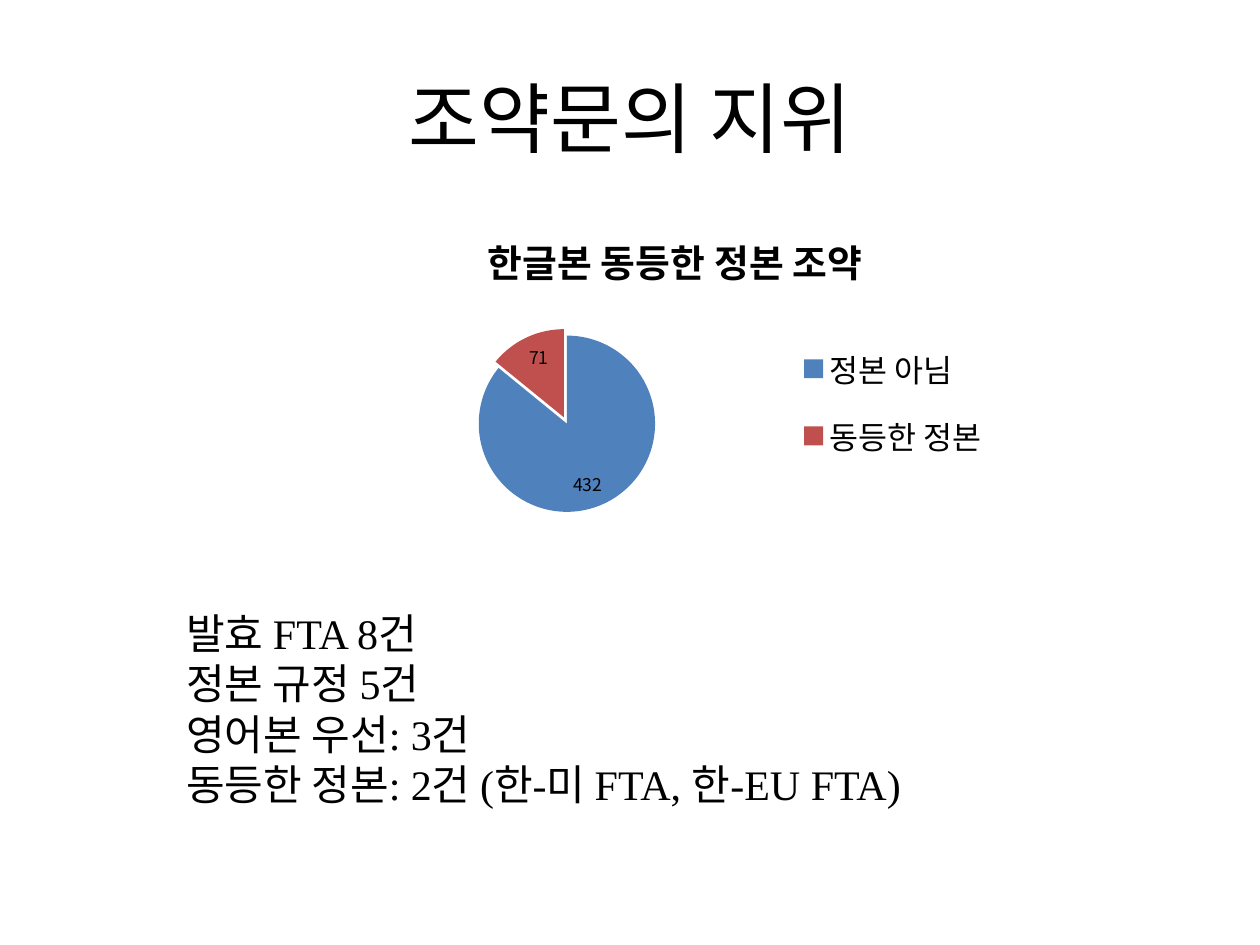
from lxml import etree
from pptx import Presentation
from pptx.chart.data import CategoryChartData
from pptx.dml.color import RGBColor
from pptx.enum.chart import XL_CHART_TYPE, XL_LABEL_POSITION, XL_LEGEND_POSITION
from pptx.enum.text import MSO_ANCHOR, PP_ALIGN
from pptx.oxml.ns import qn
from pptx.util import Inches, Pt

PIE = XL_CHART_TYPE.PIE
INSIDE_END = XL_LABEL_POSITION.INSIDE_END
LEGEND_RIGHT = XL_LEGEND_POSITION.RIGHT
LEFT, CENTER = PP_ALIGN.LEFT, PP_ALIGN.CENTER
TOP, MIDDLE = MSO_ANCHOR.TOP, MSO_ANCHOR.MIDDLE


def color(hex_string):
    return RGBColor.from_string(hex_string)


def add_value(parent, tag, value):
    etree.SubElement(parent, qn(tag)).set("val", str(value))


def set_layout(element, inner=False, **fractions):
    for old_layout in element.findall(qn("c:layout")):
        element.remove(old_layout)
    layout = etree.Element(qn("c:layout"))
    overlay = element.find(qn("c:overlay"))
    if overlay is None:
        element.insert(0, layout)
    else:
        overlay.addprevious(layout)
    manual = etree.SubElement(layout, qn("c:manualLayout"))
    if inner:
        add_value(manual, "c:layoutTarget", "inner")
    for mode in ("xMode", "yMode"):
        add_value(manual, f"c:{mode}", "edge")
    for name, fraction in fractions.items():
        add_value(manual, f"c:{name}", fraction)


class SlideBuilder:
    text_font = "Times New Roman"
    korean_font = "Noto Sans CJK KR"
    text_color = "000000"

    def __init__(self, slide):
        self.slide = slide

    def style_font(self, font, size, name=None, bold=False):
        font.size = Pt(size)
        font.bold = bold
        font.color.rgb = color(self.text_color)
        if name:
            font.name = name

    def add_text(self, box, lines, size, align=LEFT, anchor=TOP):
        shape = self.slide.shapes.add_textbox(*map(Inches, box))
        text_frame = shape.text_frame
        text_frame.word_wrap = True
        text_frame.vertical_anchor = anchor
        text_frame.text = "\n".join(lines)
        for paragraph in text_frame.paragraphs:
            paragraph.alignment = align
            for run in paragraph.runs:
                self.style_font(run.font, size, self.text_font)

    def add_pie(self, box, title, slices, size):
        data = CategoryChartData()
        data.categories = [name for name, value, fill in slices]
        data.add_series(title, [value for name, value, fill in slices])
        frame = self.slide.shapes.add_chart(PIE, *map(Inches, box), data)
        chart = frame.chart
        self.style_font(chart.font, size, self.korean_font)

        chart.has_title = True
        title_frame = chart.chart_title.text_frame
        title_frame.text = title
        title_font = title_frame.paragraphs[0].runs[0].font
        self.style_font(title_font, size * 1.2, self.korean_font, bold=True)

        chart.has_legend = True
        chart.legend.position = LEGEND_RIGHT
        chart.legend.include_in_layout = False
        self.style_font(chart.legend.font, size, self.korean_font)

        plot = chart.plots[0]
        plot.vary_by_categories = True
        plot.has_data_labels = True
        labels = plot.data_labels
        labels.show_value = True
        labels.show_percentage = False
        labels.position = INSIDE_END
        self.style_font(labels.font, 10)

        series = plot.series[0]
        for index, (name, value, fill) in enumerate(slices):
            point_fill = series.points[index].format.fill
            point_fill.solid()
            point_fill.fore_color.rgb = color(fill)
        explosion = etree.Element(qn("c:explosion"))
        explosion.set("val", "4")
        series._element.find(qn("c:dPt")).addprevious(explosion)

        plot_area = chart._chartSpace.chart.plotArea
        set_layout(plot_area, inner=True, x=0.2, y=0.4, w=0.28, h=0.56)
        set_layout(chart.legend._element, x=0.69, y=0.39, w=0.3, h=0.47)
        set_layout(chart.chart_title._element, x=0.21, y=0.08)


def main():
    presentation = Presentation()
    presentation.slide_width = Inches(10)
    presentation.slide_height = Inches(7.5)
    slide = presentation.slides.add_slide(presentation.slide_layouts[6])
    builder = SlideBuilder(slide)

    builder.add_text((0.5, 0.3, 9, 1.25), ["조약문의 지위"], 44, CENTER, MIDDLE)
    builder.add_pie(
        (2.72, 1.55, 5.2, 2.63),
        "한글본 동등한 정본 조약",
        [("정본 아님", 432, "4F81BD"), ("동등한 정본", 71, "C0504D")],
        18,
    )
    treaty_lines = [
        "발효 FTA 8건",
        "정본 규정 5건",
        "영어본 우선: 3건",
        "동등한 정본: 2건 (한-미 FTA, 한-EU FTA)",
    ]
    builder.add_text((1.38, 4.77, 7.64, 1.72), treaty_lines, 24)
    presentation.save("out.pptx")


if __name__ == "__main__":
    main()
